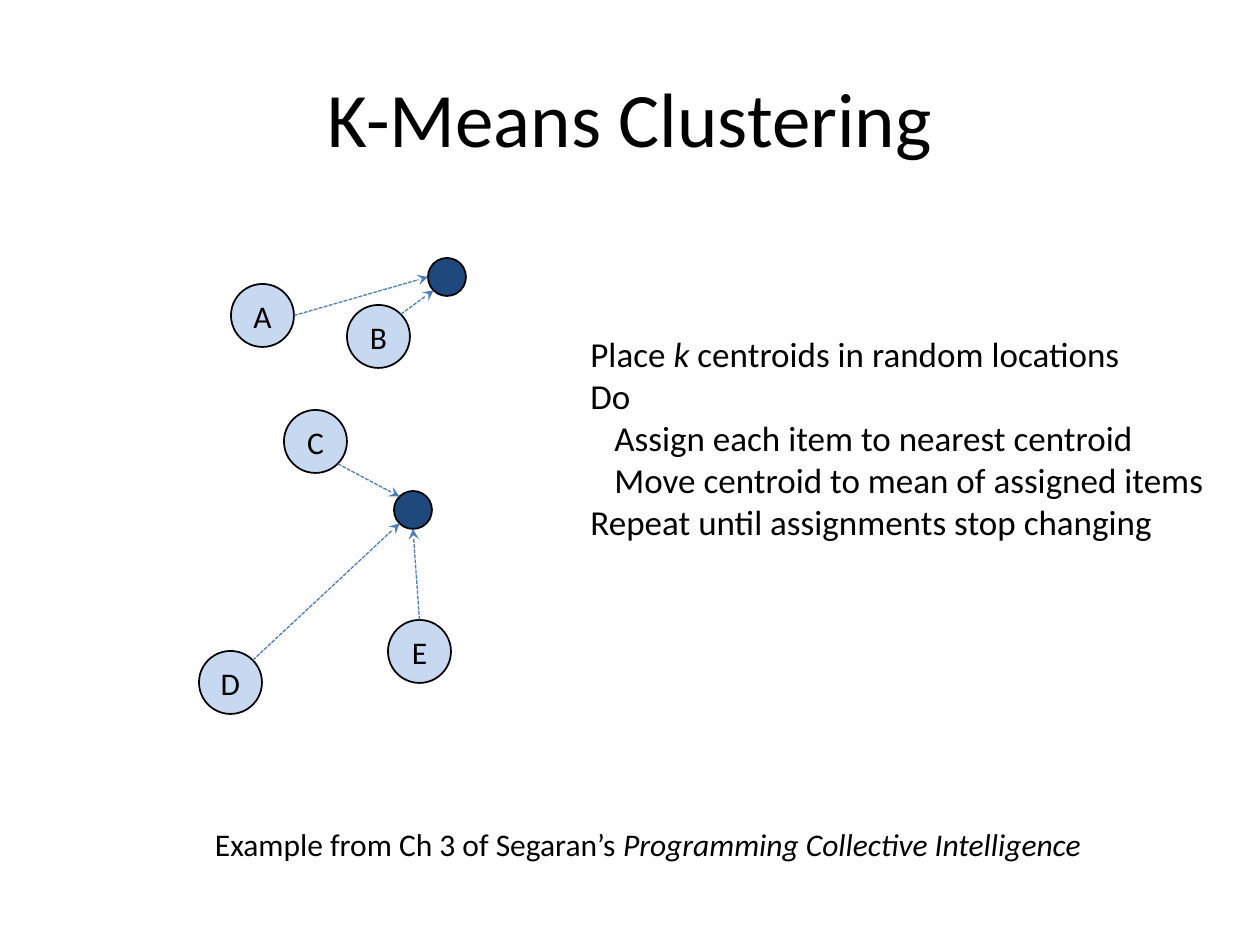
"""Build the K-Means Clustering slide with items, centroids and assignment arrows."""
from math import cos, radians, sin

from lxml.etree import SubElement
from pptx import Presentation
from pptx.dml.color import RGBColor
from pptx.enum.dml import MSO_LINE
from pptx.enum.shapes import MSO_CONNECTOR as LINK, MSO_SHAPE as SHAPE
from pptx.enum.text import MSO_ANCHOR as ANCHOR, PP_ALIGN as ALIGN
from pptx.oxml.ns import qn
from pptx.util import Pt

PX = 914400 / 126
COLORS = {"text": "000000", "item": "C6D9F1", "centroid": "1F497D", "arrow": "4B7EBC"}


def add_lines(frame, lines, size, align, anchor):
    for key, value in {"word_wrap": True, "vertical_anchor": anchor}.items():
        setattr(frame, key, value)
    for i, (indent, runs) in enumerate(lines):
        line = frame.add_paragraph() if i else frame.paragraphs[0]
        line.alignment = align
        if indent:
            line._p.get_or_add_pPr().set("marL", str(round(indent * PX)))
        for words, italic in runs:
            run = line.add_run()
            run.text = words
            run.font.color.rgb = RGBColor.from_string(COLORS["text"])
            look = {"name": "Calibri", "size": Pt(size), "italic": italic}
            for key, value in look.items():
                setattr(run.font, key, value)


def add_circle(left, top, size, color):
    circle = slide.shapes.add_shape(
        SHAPE.OVAL, *(round(n * PX) for n in (left, top, size, size)))
    circle.shadow.inherit = False
    circle.fill.solid()
    circle.fill.fore_color.rgb = RGBColor.from_string(COLORS[color])
    circle.line.color.rgb = RGBColor.from_string(COLORS["text"])
    circle.line.width = Pt(1)
    return circle


deck = Presentation()
deck.slide_width, deck.slide_height = round(1260 * PX), round(945 * PX)
slide = deck.slides.add_slide(deck.slide_layouts[6])

title = [(0, [("K-Means Clustering", False)])]
algorithm = [
    (0, [("Place ", False), ("k", True), (" centroids in random locations", False)]),
    (0, [("Do", False)]),
    (24, [("Assign each item to nearest centroid", False)]),
    (24, [("Move centroid to mean of assigned items", False)]),
    (0, [("Repeat until assignments stop changing", False)]),
]
credit = [(0, [("Example from Ch 3 of Segaran’s ", False),
               ("Programming Collective Intelligence", True)])]
for box, lines, size, align, anchor in [
    ((63, 38, 1134, 158), title, 44, ALIGN.CENTER, ANCHOR.MIDDLE),
    ((578, 326, 662, 224), algorithm, 20, ALIGN.LEFT, ANCHOR.TOP),
    ((186, 819, 924, 50), credit, 18, ALIGN.CENTER, ANCHOR.TOP),
]:
    words_box = slide.shapes.add_textbox(*(round(n * PX) for n in box))
    add_lines(words_box.text_frame, lines, size, align, anchor)

items = {"A": (231, 284), "B": (347, 305), "C": (284, 410), "D": (199, 651), "E": (388, 620)}
centroids = {"upper": (428, 258), "lower": (394, 491)}
ITEM, CENTROID = 63, 38

for letter, (left, top) in items.items():
    item = add_circle(left, top, ITEM, "item")
    add_lines(item.text_frame, [(0, [(letter, False)])], 18, ALIGN.CENTER, ANCHOR.MIDDLE)
for left, top in centroids.values():
    add_circle(left, top, CENTROID, "centroid")

assignments = [("B", "upper", -45), ("A", "upper", 0), ("C", "lower", 45),
               ("D", "lower", -45), ("E", "lower", -90)]
for letter, centroid, angle in assignments:
    ends = []
    for (left, top), size, side in [(items[letter], ITEM, 1),
                                    (centroids[centroid], CENTROID, -1)]:
        reach = side * size / 2
        ends += [round((left + size / 2 + reach * cos(radians(angle))) * PX),
                 round((top + size / 2 + reach * sin(radians(angle))) * PX)]
    arrow = slide.shapes.add_connector(LINK.STRAIGHT, *ends)
    arrow.line.color.rgb = RGBColor.from_string(COLORS["arrow"])
    for key, value in {"width": Pt(0.75), "dash_style": MSO_LINE.SQUARE_DOT}.items():
        setattr(arrow.line, key, value)
    SubElement(arrow.line._get_or_add_ln(), qn("a:tailEnd"), type="stealth")
    SubElement(arrow._element.spPr, qn("a:effectLst"))

deck.save("out.pptx")
